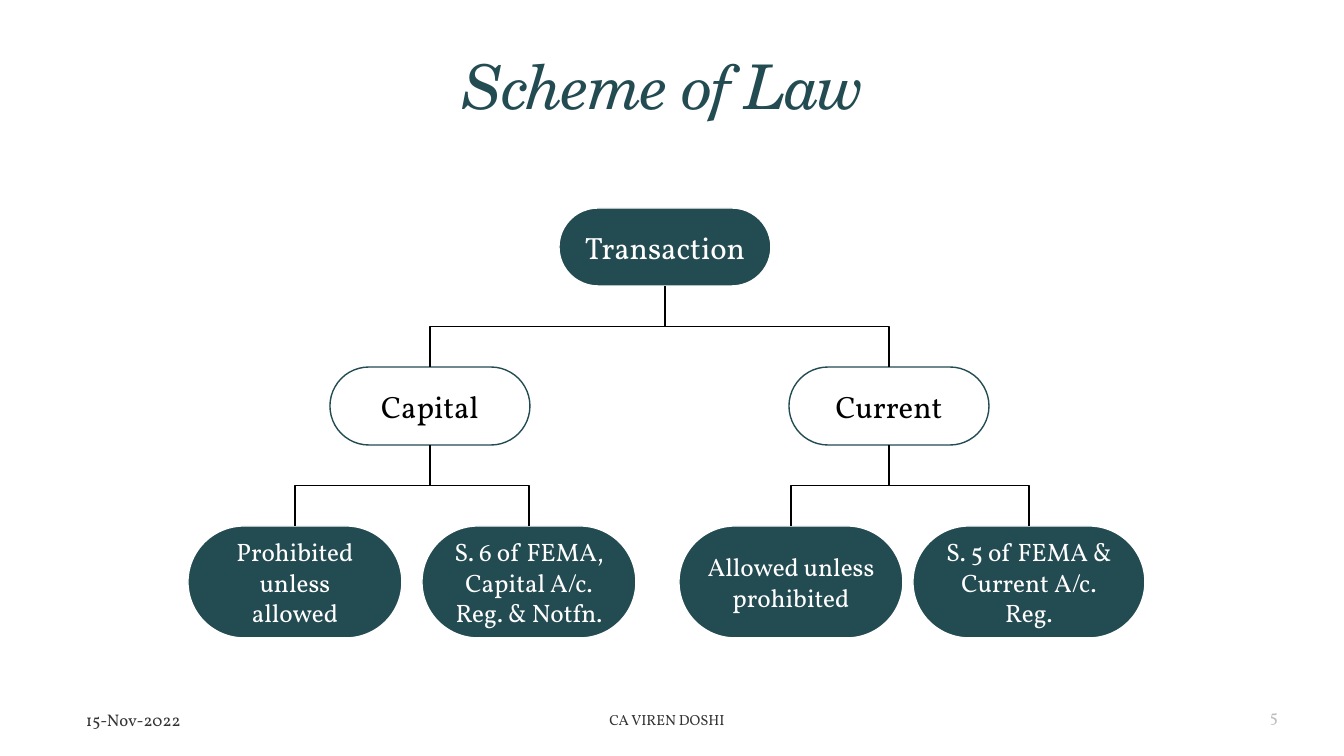
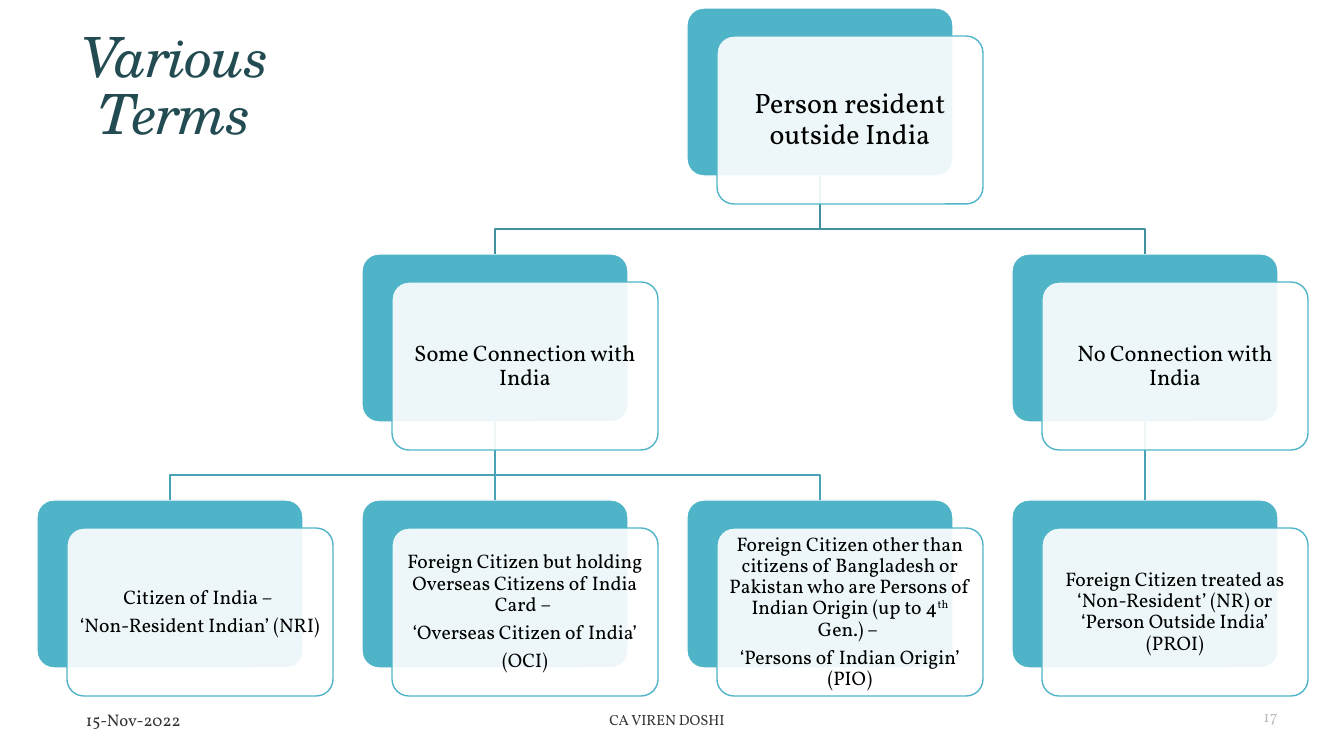
"""Build two slides: a scheme of law tree and a tree of residence terms."""
from lxml import etree
from pptx import Presentation
from pptx.dml.color import RGBColor
from pptx.enum.shapes import MSO_CONNECTOR, MSO_SHAPE
from pptx.enum.text import MSO_ANCHOR, PP_ALIGN
from pptx.oxml.ns import qn
from pptx.util import Emu, Pt

ROUND = MSO_SHAPE.ROUNDED_RECTANGLE
ELBOW, STRAIGHT = MSO_CONNECTOR.ELBOW, MSO_CONNECTOR.STRAIGHT
LEFT, CENTER, RIGHT = PP_ALIGN.LEFT, PP_ALIGN.CENTER, PP_ALIGN.RIGHT
MIDDLE, BOTTOM = MSO_ANCHOR.MIDDLE, MSO_ANCHOR.BOTTOM

WHITE = RGBColor(0xFF, 0xFF, 0xFF)
BLACK = RGBColor(0, 0, 0)
DARK = RGBColor(0x23, 0x4B, 0x52)
AQUA = RGBColor(0x50, 0xB4, 0xC8)
LINKS = [RGBColor(0x40, 0x90, 0xA0), RGBColor(0x49, 0xA3, 0xB6)]
SERIF, BODY = "TeX Gyre Schola", "Vollkorn"
SCALE = 914400 / 100.8

FOOT = [
    ("15-Nov-2022", (76, 707, 454, 25), 12, LEFT, MIDDLE, 80),
    ("CA VIREN DOSHI", (390, 707, 554, 25), 10.5, CENTER, MIDDLE, 80),
]
NUMBER = ((978, 707, 310, 24), 12, RIGHT, BOTTOM, 25)

LEVELS = [
    dict(top=208, high=78, size=22, fill=DARK, edge=WHITE, ink=WHITE),
    dict(top=367, high=78, size=22, fill=WHITE, edge=DARK, ink=BLACK),
    dict(top=526, high=112, size=18, fill=DARK, edge=WHITE, ink=WHITE),
]
NODES = [
    ("Transaction", 0, 665, 212, None),
    ("Capital", 1, 430, 200, 0),
    ("Current", 1, 889, 200, 0),
    ("Prohibited unless allowed", 2, 295, 214, 1),
    ("S. 6 of FEMA, Capital A/c. Reg. & Notfn.", 2, 529, 214, 1),
    ("Allowed unless prohibited", 2, 791, 224, 2),
    ("S. 5 of FEMA & Current A/c. Reg.", 2, 1029, 232, 2),
]

ROWS = [(20, 8), (16, 7), (14, 6)]
CARDS = [
    (["Person resident outside India"], 0, 2, None),
    (["Some Connection with India"], 1, 1, 0),
    (["No Connection with India"], 1, 3, 0),
    (["Citizen of India – ", "‘Non-Resident Indian’ (NRI)"], 2, 0, 1),
    (["Foreign Citizen but holding Overseas Citizens of India Card – ",
      "‘Overseas Citizen of India’", "(OCI)"], 2, 1, 1),
    (["Foreign Citizen other than citizens of Bangladesh or Pakistan who are "
      "Persons of Indian Origin (up to 4^th^ Gen.) – ",
      "‘Persons of Indian Origin’ (PIO)"], 2, 2, 1),
    (["Foreign Citizen treated as ‘Non-Resident’ (NR) or "
      "‘Person Outside India’ (PROI)"], 2, 3, 2),
]


def px(num):
    return Emu(round(num * SCALE))


def fade(node, pct):
    for tint in node.iter(qn("a:srgbClr")):
        etree.SubElement(tint, qn("a:alpha")).set("val", str(pct * 1000))


def write(shape, lines, size, ink, face=BODY, align=CENTER, anchor=MIDDLE,
          inset=None, lead=None):
    """Fill a shape with paragraphs; text between carets is raised."""
    frame = shape.text_frame
    frame.word_wrap = True
    frame.vertical_anchor = anchor
    if inset is not None:
        frame.margin_left = frame.margin_right = px(inset)
        frame.margin_top = frame.margin_bottom = px(inset)
    for i, line in enumerate(lines):
        para = frame.add_paragraph() if i else frame.paragraphs[0]
        para.alignment = align
        if lead:
            para.line_spacing = lead
        if i < len(lines) - 1:
            para.space_after = Pt(5)
        font = para.font
        font.name, font.size = face, Pt(size)
        font.color.rgb = ink
        for k, part in enumerate(line.split("^")):
            run = para.add_run()
            run.text = part
            if k % 2:
                run._r.get_or_add_rPr().set("baseline", "30000")
    return frame


def label(slide, box, *args, **opts):
    shape = slide.shapes.add_textbox(*map(px, box))
    write(shape, *args, **opts)
    return shape


def pill(slide, box, fill, edge, curve, alpha=None):
    shape = slide.shapes.add_shape(ROUND, *map(px, box))
    shape.adjustments[0] = curve
    shape.shadow.inherit = False
    shape.fill.solid()
    shape.fill.fore_color.rgb = fill
    if alpha:
        fade(shape._element.spPr, alpha)
    shape.line.color.rgb = edge
    shape.line.width = Pt(1)
    return shape


def link(slide, top, low, color, bend=50):
    """Join the bottom of one shape to the top of another."""
    x1, y1 = top.left + top.width // 2, top.top + top.height
    x2, y2 = low.left + low.width // 2, low.top
    if x1 == x2:
        line = slide.shapes.add_connector(STRAIGHT, x1, y1, x2, y2)
        line.begin_connect(top, 2)
        line.end_connect(low, 0)
    else:
        mid_x, mid_y = (x1 + x2) // 2, (y1 + y2) // 2
        wide, high = abs(x2 - x1) // 2, (y2 - y1) // 2
        side = high if x2 < x1 else -high
        line = slide.shapes.add_connector(
            ELBOW, mid_x - side, mid_y - wide, mid_x + side, mid_y + wide)
        props = line._element.spPr
        turn = 90 if x2 < x1 else 270
        props.find(qn("a:xfrm")).set("rot", str(turn * 60000))
        guide = etree.SubElement(props.find(".//" + qn("a:avLst")), qn("a:gd"))
        guide.set("name", "adj1")
        guide.set("fmla", f"val {bend * 1000}")
    line.line.color.rgb = color
    line.line.width = Pt(1)
    etree.SubElement(line._element.spPr, qn("a:effectLst"))


def start(deck, title, box, size, number):
    """Add a blank slide with its title and footer."""
    slide = deck.slides.add_slide(deck.slide_layouts[6])
    head = label(slide, box, [title], size, DARK, face=SERIF, lead=0.85)
    para = head.text_frame.paragraphs[0]
    para.font.italic = True
    para._p.pPr.find(qn("a:defRPr")).set("spc", "-120")
    for text, spot, pts, align, anchor, alpha in FOOT + [(number, *NUMBER)]:
        note = label(slide, spot, [text], pts, BLACK, align=align, anchor=anchor)
        fade(note._element, alpha)
    return slide


def scheme(deck):
    slide = start(deck, "Scheme of Law", (71, 0, 1187, 182), 44, "5")
    pills = []
    for text, level, mid, wide, _ in NODES:
        look = LEVELS[level]
        box = (mid - wide // 2, look["top"], wide, look["high"])
        shape = pill(slide, box, look["fill"], look["edge"], 0.5)
        write(shape, [text], look["size"], look["ink"], inset=10)
        pills.append(shape)
    for shape, (*_, boss) in zip(pills, NODES):
        if boss is not None:
            link(slide, pills[boss], shape, BLACK)


def terms(deck):
    slide = start(deck, "Various Terms", (37, 39, 276, 100), 39.6, "17")
    spots = [(37 + 325 * col, 8 + 246 * row) for _, row, col, _ in CARDS]
    backs = [pill(slide, (x, y, 266, 168), AQUA, WHITE, 0.1) for x, y in spots]
    for back, (_, row, _, boss) in zip(backs, CARDS):
        if boss is not None:
            link(slide, backs[boss], back, LINKS[row - 1], 68)
    for (x, y), (lines, row, *_) in zip(spots, CARDS):
        size, inset = ROWS[row]
        front = pill(slide, (x + 30, y + 28, 266, 168), WHITE, AQUA, 0.1, 90)
        write(front, lines, size, BLACK, inset=inset, lead=0.9)


def main():
    deck = Presentation()
    deck.slide_width, deck.slide_height = px(1344), px(756)
    scheme(deck)
    terms(deck)
    deck.save("out.pptx")


if __name__ == "__main__":
    main()
